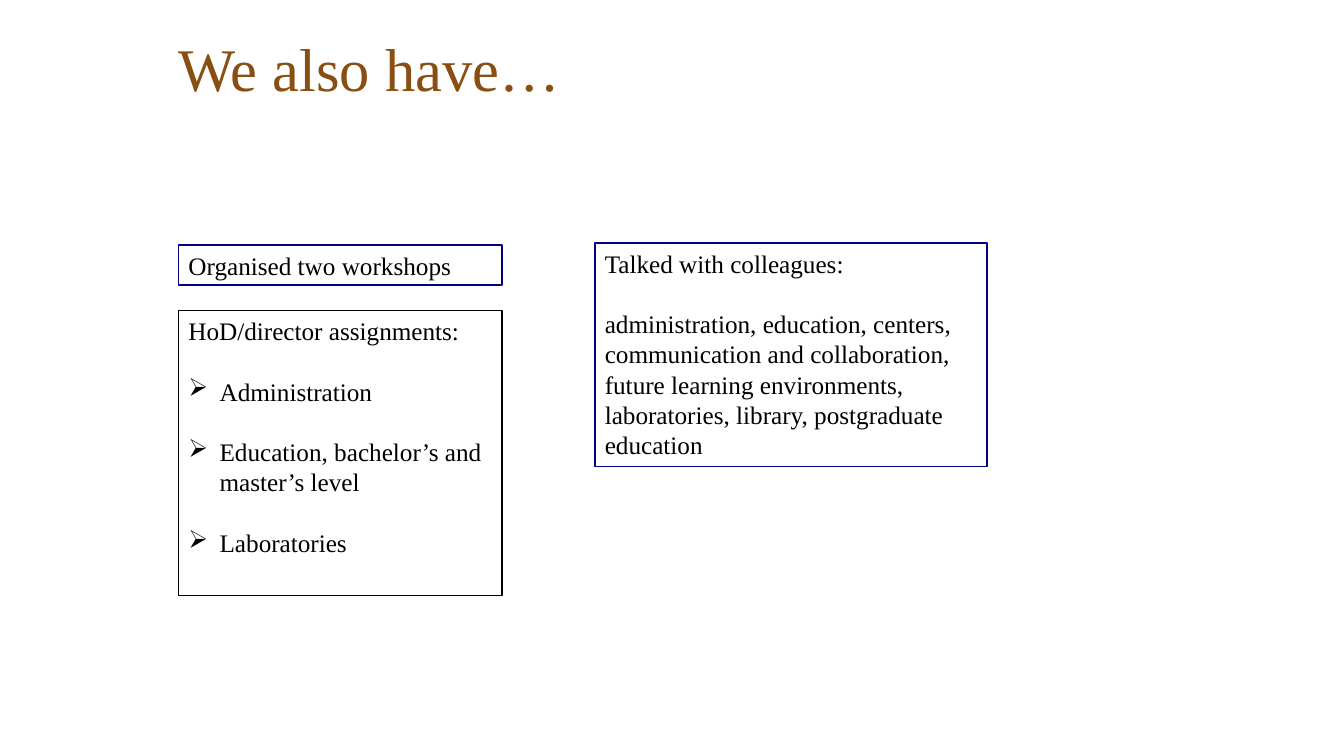
from dataclasses import dataclass

from lxml import etree
from pptx import Presentation
from pptx import util as u
from pptx.dml.color import RGBColor
from pptx.enum import shapes, text
from pptx.oxml.ns import qn


@dataclass(frozen=True)
class Theme:
    font: str = "Times New Roman"
    title_size: float = 43.2
    body_size: float = 18
    gap: float = 21.6
    indent: float = 0.31
    title: str = "894E11"
    ink: str = "000000"
    paper: str = "FFFFFF"
    navy: str = "000080"


class SlideBuilder:
    def __init__(self, prs, theme):
        self.theme = theme
        self.s = prs.slides.add_slide(prs.slide_layouts[5])

    def run(self, p, words, size, color):
        r = p.add_run()
        r.text = words
        r.font.name = self.theme.font
        r.font.size = u.Pt(size)
        r.font.color.rgb = RGBColor.from_string(color)

    def title(self, words, left, top, width, height):
        sp = self.s.shapes.title
        sp.left, sp.top = u.Inches(left), u.Inches(top)
        sp.width, sp.height = u.Inches(width), u.Inches(height)
        tf = sp.text_frame
        tf.auto_size = text.MSO_AUTO_SIZE.NONE
        tf.vertical_anchor = text.MSO_ANCHOR.TOP
        tf.margin_left = tf.margin_right = tf.margin_top = tf.margin_bottom = 0
        p = tf.paragraphs[0]
        p.alignment = text.PP_ALIGN.LEFT
        p.line_spacing = 0.9
        self.run(p, words, self.theme.title_size, self.theme.title)

    def bullet(self, p):
        pPr = p._p.get_or_add_pPr()
        indent = u.Inches(self.theme.indent)
        pPr.set("marL", str(indent))
        pPr.set("indent", str(-indent))
        etree.SubElement(pPr, qn("a:buChar")).set("char", "➢")

    def box(self, left, top, width, height, line, heading, body=(), bulleted=False):
        sp = self.s.shapes.add_shape(
            shapes.MSO_SHAPE.RECTANGLE,
            u.Inches(left), u.Inches(top), u.Inches(width), u.Inches(height))
        sp.shadow.inherit = False
        sp.fill.solid()
        sp.fill.fore_color.rgb = RGBColor.from_string(self.theme.paper)
        sp.line.color.rgb = RGBColor.from_string(line)
        sp.line.width = u.Pt(1)
        tf = sp.text_frame
        tf.word_wrap = True
        tf.vertical_anchor = text.MSO_ANCHOR.TOP
        for i, words in enumerate([heading, *body]):
            p = tf.add_paragraph() if i else tf.paragraphs[0]
            p.alignment = text.PP_ALIGN.LEFT
            if i:
                p.space_before = u.Pt(self.theme.gap)
                if bulleted:
                    self.bullet(p)
            self.run(p, words, self.theme.body_size, self.theme.ink)


def main():
    prs = Presentation()
    prs.slide_width, prs.slide_height = u.Inches(13.33), u.Inches(7.5)
    theme = Theme()
    slide = SlideBuilder(prs, theme)
    left, column = 1.77, 3.21

    # Title
    slide.title("We also have…", left, 0.39, 9.65, 1.31)

    # Right column: conversations
    slide.box(5.9, 2.41, 3.89, 2.22, theme.navy, "Talked with colleagues:", [
        "administration, education, centers, communication and collaboration, "
        "future learning environments, laboratories, library, "
        "postgraduate education"])

    # Left column: assignments and workshops
    slide.box(left, 3.08, column, 2.83, theme.ink, "HoD/director assignments:", [
        "Administration",
        "Education, bachelor’s and master’s level",
        "Laboratories"], bulleted=True)
    slide.box(left, 2.43, column, 0.4, theme.navy, "Organised two workshops")

    prs.save("out.pptx")


if __name__ == "__main__":
    main()
